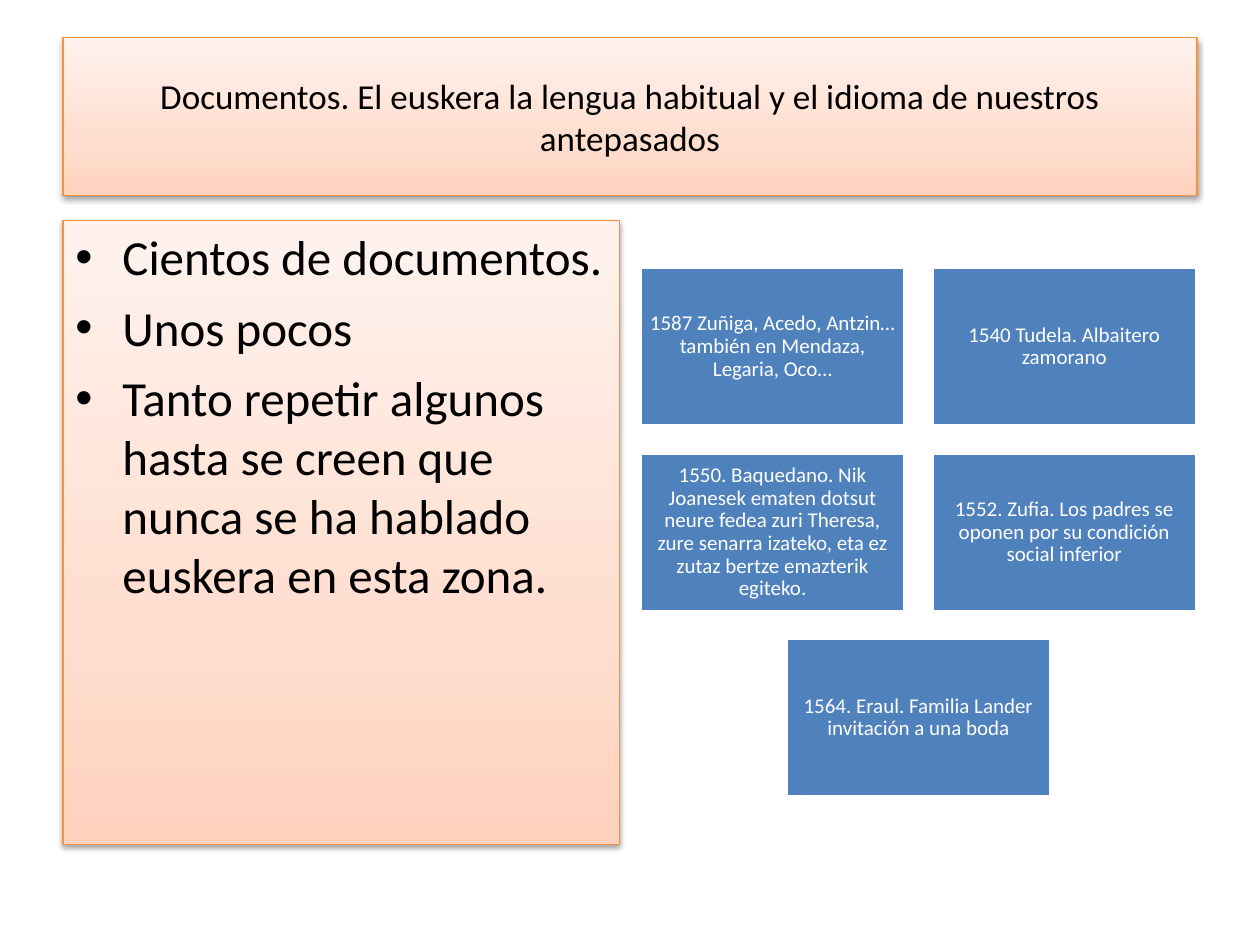
"""Build a slide on historical documents that show everyday use of Basque."""
import lxml.etree
import pptx
import pptx.dml.color
import pptx.enum.shapes
import pptx.enum.text
import pptx.oxml.ns
import pptx.util
from pptx.util import Cm

BLACK = pptx.dml.color.RGBColor(0x00, 0x00, 0x00)
WHITE = pptx.dml.color.RGBColor(0xFF, 0xFF, 0xFF)
BLUE = pptx.dml.color.RGBColor(0x4F, 0x81, 0xBD)
ORANGE = pptx.dml.color.RGBColor(0xF6, 0x92, 0x40)
PEACH_STOPS = (
    (0, pptx.dml.color.RGBColor(0xFF, 0xD2, 0xBD)),
    (35, pptx.dml.color.RGBColor(0xFF, 0xDE, 0xD0)),
    (100, pptx.dml.color.RGBColor(0xFF, 0xF2, 0xED)),
)

FONT = "Calibri"
CENTER = pptx.enum.text.PP_ALIGN.CENTER
LEFT = pptx.enum.text.PP_ALIGN.LEFT
TOP = pptx.enum.text.MSO_ANCHOR.TOP
MIDDLE = pptx.enum.text.MSO_ANCHOR.MIDDLE

TITLE = "Documentos. El euskera la lengua habitual y el idioma de nuestros antepasados"
POINTS = (
    "Cientos de documentos.",
    "Unos pocos",
    "Tanto repetir algunos hasta se creen que nunca se ha hablado euskera en esta zona.",
)
RECORDS = (
    "1587 Zuñiga, Acedo, Antzin… también en Mendaza, Legaria, Oco…",
    "1540 Tudela. Albaitero zamorano",
    "1550. Baquedano. Nik Joanesek ematen dotsut neure fedea zuri Theresa, "
    "zure senarra izateko, eta ez zutaz bertze emazterik egiteko.",
    "1552. Zufia. Los padres se oponen por su condición social inferior",
    "1564. Eraul. Familia Lander invitación a una boda",
)
COLUMNS = 2
RECORD_LEFT, RECORD_TOP = 12.91, 5.39
RECORD_WIDTH, RECORD_HEIGHT = 5.33, 3.2
COLUMN_STEP, ROW_STEP = 5.88, 3.74


def add_xml(parent, tag, **attributes):
    """Append a DrawingML element and return it."""
    return lxml.etree.SubElement(parent, pptx.oxml.ns.qn(tag), attributes)


def add_box(page, left, top, width, height, line_color, line_width):
    """Add a rectangle measured in centimetres, without a shadow."""
    box = page.shapes.add_shape(
        pptx.enum.shapes.MSO_SHAPE.RECTANGLE, Cm(left), Cm(top), Cm(width), Cm(height)
    )
    box.shadow.inherit = False
    box.line.color.rgb = line_color
    box.line.width = pptx.util.Pt(line_width)
    return box


def add_panel(page, left, top, width, height):
    """Add a peach gradient panel with a soft shadow below it."""
    box = add_box(page, left, top, width, height, ORANGE, 0.75)
    box.fill.gradient()
    box.fill.gradient_angle = 90
    properties = box.element.spPr
    stops = properties.find(".//" + pptx.oxml.ns.qn("a:gsLst"))
    for stop in list(stops):
        stops.remove(stop)
    for position, color in PEACH_STOPS:
        stop = add_xml(stops, "a:gs", pos=str(position * 1000))
        add_xml(stop, "a:srgbClr", val=str(color))
    effects = properties.find(pptx.oxml.ns.qn("a:effectLst"))
    shadow = add_xml(effects, "a:outerShdw", blurRad="40000", dist="20000",
                     dir="5400000", rotWithShape="0")
    color = add_xml(shadow, "a:srgbClr", val=str(BLACK))
    add_xml(color, "a:alpha", val="38000")
    return box


def add_record(page, left, top, text):
    """Add a blue box with one dated record."""
    box = add_box(page, left, top, RECORD_WIDTH, RECORD_HEIGHT, WHITE, 2)
    box.fill.solid()
    box.fill.fore_color.rgb = BLUE
    write(box, text, size=12, color=WHITE, inset=0.13, line_spacing=0.9)


def write(box, *texts, size, color=BLACK, align=CENTER, anchor=MIDDLE,
          inset=None, line_spacing=None, space_before=0, bullet_indent=None):
    """Write one paragraph for each text, with bullets if an indent is given."""
    frame = box.text_frame
    frame.word_wrap = True
    frame.vertical_anchor = anchor
    if inset is not None:
        frame.margin_left = frame.margin_right = Cm(inset)
        frame.margin_top = frame.margin_bottom = Cm(inset)
    for index, text in enumerate(texts):
        para = frame.add_paragraph() if index else frame.paragraphs[0]
        para.alignment = align
        para.line_spacing = line_spacing
        para.space_before = pptx.util.Pt(space_before)
        if bullet_indent is not None:
            properties = para._p.get_or_add_pPr()
            properties.set("marL", str(Cm(bullet_indent)))
            properties.set("indent", str(-Cm(bullet_indent)))
            add_xml(properties, "a:buFont", typeface="Arial")
            add_xml(properties, "a:buChar", char="•")
        span = para.add_run()
        span.text = text
        span.font.name = FONT
        span.font.size = pptx.util.Pt(size)
        span.font.color.rgb = color


def add_records(page):
    """Lay the records out in rows, centring a row that is not full."""
    for index, text in enumerate(RECORDS):
        row, column = divmod(index, COLUMNS)
        row_count = min(COLUMNS, len(RECORDS) - row * COLUMNS)
        offset = column + (COLUMNS - row_count) / 2
        add_record(page, RECORD_LEFT + offset * COLUMN_STEP,
                   RECORD_TOP + row * ROW_STEP, text)


def main():
    """Build and save the deck."""
    deck = pptx.Presentation()
    deck.slide_width, deck.slide_height = Cm(25.4), Cm(19.05)
    page = deck.slides.add_slide(deck.slide_layouts[6])
    write(add_panel(page, 1.27, 0.76, 22.86, 3.18), TITLE, size=20)
    write(add_panel(page, 1.27, 4.45, 11.22, 12.57), *POINTS, size=28,
          align=LEFT, anchor=TOP, space_before=6.6, bullet_indent=0.95)
    add_records(page)
    deck.save("out.pptx")


if __name__ == "__main__":
    main()
